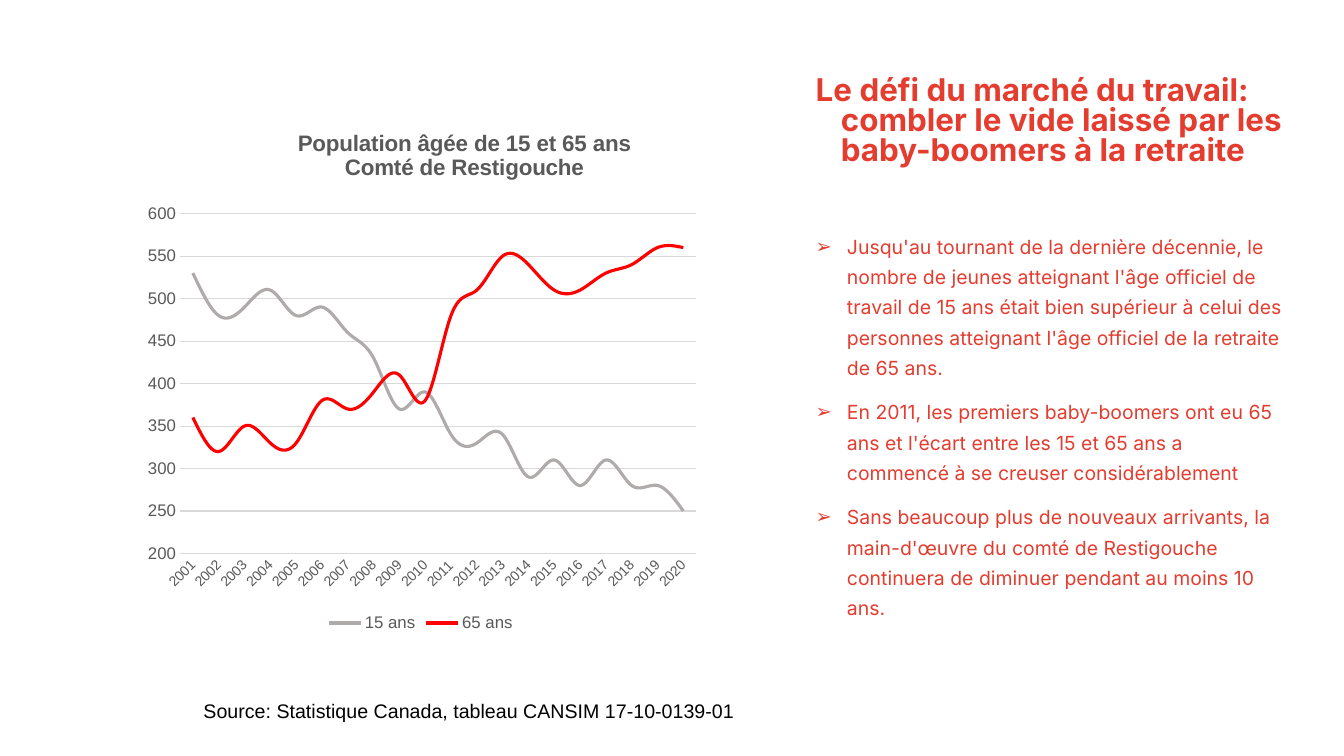
from lxml import etree
from pptx import Presentation
from pptx.chart.data import CategoryChartData
from pptx.dml.color import RGBColor
from pptx.enum.chart import XL_CHART_TYPE, XL_LEGEND_POSITION, XL_MARKER_STYLE, XL_TICK_MARK
from pptx.enum.text import MSO_ANCHOR, MSO_AUTO_SIZE, PP_ALIGN
from pptx.oxml import parse_xml
from pptx.oxml.ns import nsdecls, qn
from pptx.util import Pt

LINE = XL_CHART_TYPE.LINE
BOTTOM = XL_LEGEND_POSITION.BOTTOM
NO_MARKER = XL_MARKER_STYLE.NONE
NO_TICK = XL_TICK_MARK.NONE
TOP = MSO_ANCHOR.TOP
NO_FIT = MSO_AUTO_SIZE.NONE
LEFT = PP_ALIGN.LEFT

EMU_PER_PX = 9144
COLORS = {"red": "E43D30", "black": "000000", "label": "595959",
          "grid": "D9D9D9", "young": "AFABAB", "senior": "FF0000"}

TITLE = "Le défi du marché du travail: combler le vide laissé par les baby-boomers à la retraite"
POINTS = [
    "Jusqu'au tournant de la dernière décennie, le nombre de jeunes atteignant l'âge officiel de travail de 15 ans "
    "était bien supérieur à celui des personnes atteignant l'âge officiel de la retraite de 65 ans.",
    "En 2011, les premiers baby-boomers ont eu 65 ans et l'écart entre les 15 et 65 ans a commencé à se creuser "
    "considérablement",
    "Sans beaucoup plus de nouveaux arrivants, la main-d'œuvre du comté de Restigouche continuera de diminuer "
    "pendant au moins 10 ans.",
]
SOURCE = "Source: Statistique Canada, tableau CANSIM 17-10-0139-01"
CHART_TITLE = ["Population âgée de 15 et 65 ans", "Comté de Restigouche"]
YEARS = [str(year) for year in range(2001, 2021)]
SERIES = [
    ("15 ans", "young", [530, 480, 490, 510, 480, 490, 460, 430, 370, 390,
                         340, 330, 340, 290, 310, 280, 310, 280, 280, 250]),
    ("65 ans", "senior", [360, 320, 350, 330, 330, 380, 370, 390, 410, 380,
                          480, 510, 550, 540, 510, 510, 530, 540, 560, 560]),
]


def px(n):
    return n * EMU_PER_PX


def rgb(name):
    return RGBColor.from_string(COLORS[name])


def set_font(font, size, color, name="Arial", bold=False):
    font.size, font.name, font.bold = Pt(size), name, bold
    font.color.rgb = rgb(color)


def add_bullet(p, char, color):
    pPr = p._p.get_or_add_pPr()
    clr = etree.SubElement(pPr, qn("a:buClr"))
    etree.SubElement(clr, qn("a:srgbClr"), val=COLORS[color])
    etree.SubElement(pPr, qn("a:buFont"), typeface="Arial")
    etree.SubElement(pPr, qn("a:buChar"), char=char)


def write(tf, texts, size, color, font="Arial", bold=False, spacing=1.0,
          before=0, margin=0, hanging=0, bullet=None):
    tf.word_wrap = True
    for i, text in enumerate(texts):
        p = tf.paragraphs[0] if i == 0 else tf.add_paragraph()
        pPr = p._p.get_or_add_pPr()
        pPr.set("marL", str(px(margin)))
        pPr.set("indent", str(-px(hanging)))
        if bullet:
            add_bullet(p, bullet, color)
        p.alignment, p.line_spacing = LEFT, spacing
        p.space_before = Pt(before if i else 0)
        r = p.add_run()
        r.text = text
        set_font(r.font, size, color, font, bold)


def place(sp, x, y, w, h):
    sp.left, sp.top, sp.width, sp.height = px(x), px(y), px(w), px(h)
    sp.text_frame.auto_size = NO_FIT
    sp.text_frame.vertical_anchor = TOP


def add_message(s, x, y, w, h):
    title, body = s.shapes.title, s.placeholders[1]
    place(title, x, y, w, 130)
    write(title.text_frame, [TITLE], 22.4, "red", "Inter", bold=True,
          spacing=0.8, margin=50, hanging=25)
    place(body, x, y + 149, w, h - 149)
    write(body.text_frame, POINTS, 13.9, "red", "Inter", spacing=1.3,
          before=10, margin=56, hanging=31, bullet="➢")


def add_source(s, x, y, w, h):
    sp = s.shapes.add_textbox(px(x), px(y), px(w), px(h))
    write(sp.text_frame, [SOURCE], 14, "black")


def set_layout(parent, index, **values):
    for old in parent.findall(qn("c:layout")):
        parent.remove(old)
    inner = '<c:layoutTarget val="inner"/>' if "w" in values else ""
    modes = "".join(f'<c:{k}Mode val="edge"/>' for k in "xy")
    sizes = "".join(f'<c:{k} val="{v}"/>' for k, v in values.items())
    parent.insert(index, parse_xml(
        f'<c:layout {nsdecls("c")}><c:manualLayout>{inner}{modes}{sizes}'
        '</c:manualLayout></c:layout>'))


def style_axis(axis, size):
    axis.major_tick_mark = axis.minor_tick_mark = NO_TICK
    set_font(axis.tick_labels.font, size, "label")


def style_line(line, color, width):
    line.color.rgb = rgb(color)
    line.width = Pt(width)


def add_population_chart(s, x, y, w, h):
    data = CategoryChartData(number_format="0")
    data.categories = YEARS
    for name, _, values in SERIES:
        data.add_series(name, values)
    chart = s.shapes.add_chart(LINE, px(x), px(y), px(w), px(h), data).chart
    set_font(chart.font, 10, "black")

    tf = chart.chart_title.text_frame
    for i, text in enumerate(CHART_TITLE):
        p = tf.paragraphs[0] if i == 0 else tf.add_paragraph()
        r = p.add_run()
        r.text = text
        set_font(r.font, 16, "label", bold=True)
    chart.chart_title.include_in_layout = False
    set_layout(chart.chart_title._element, 1, x=0.28, y=0.01)
    set_layout(chart._chartSpace.chart.plotArea, 0, x=0.08, y=0.18, w=0.9, h=0.66)

    years, people = chart.category_axis, chart.value_axis
    style_axis(years, 10)
    style_line(years.format.line, "grid", 0.75)
    years._element.find(qn("c:txPr")).find(qn("a:bodyPr")).set("rot", "-2700000")
    style_axis(people, 12)
    people.format.line.fill.background()
    people.minimum_scale, people.maximum_scale, people.major_unit = 200, 600, 50
    people.has_major_gridlines = True
    style_line(people.major_gridlines.format.line, "grid", 0.75)

    chart.has_legend = True
    chart.legend.position = BOTTOM
    chart.legend.include_in_layout = False
    set_font(chart.legend.font, 12, "label")

    chart.plots[0].vary_by_categories = False
    for series, (_, color, _) in zip(chart.plots[0].series, SERIES):
        series.smooth = True
        series.marker.style = NO_MARKER
        style_line(series.format.line, color, 2.25)


def main():
    prs = Presentation()
    prs.slide_width, prs.slide_height = px(1333), px(750)
    s = prs.slides.add_slide(prs.slide_layouts[1])
    add_message(s, 774, 72, 509, 582)
    add_source(s, 192, 688, 936, 34)
    add_population_chart(s, 133, 120, 569, 511)
    prs.save("out.pptx")


if __name__ == "__main__":
    main()
